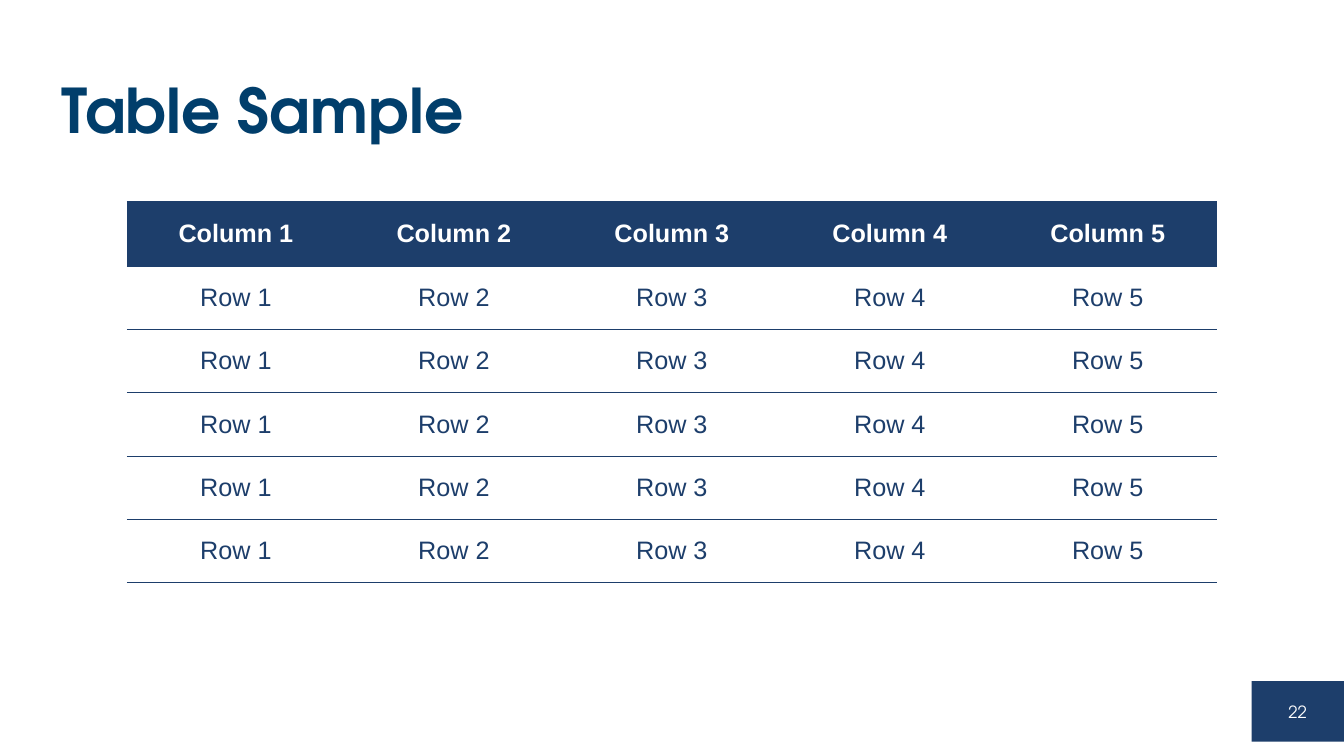
from lxml import etree
from pptx import Presentation
from pptx.dml.color import RGBColor
from pptx.enum.shapes import MSO_SHAPE
from pptx.enum.text import MSO_ANCHOR, PP_ALIGN
from pptx.oxml.ns import qn
from pptx.util import Pt

RECTANGLE = MSO_SHAPE.RECTANGLE
MIDDLE = MSO_ANCHOR.MIDDLE
LEFT, CENTER = PP_ALIGN.LEFT, PP_ALIGN.CENTER

NAVY = RGBColor(0x1D, 0x3E, 0x6B)
TITLE_BLUE = RGBColor(0x01, 0x3E, 0x6B)
WHITE = RGBColor(0xFF, 0xFF, 0xFF)

TITLE_FORMAT = {"name": "TeX Gyre Adventor", "size": Pt(44), "bold": True}
NUMBER_FORMAT = {"name": "TeX Gyre Adventor", "size": Pt(12), "bold": False}
HEADER_FORMAT = {"name": "Arial", "size": Pt(18), "bold": True}
BODY_FORMAT = {**HEADER_FORMAT, "bold": False}
CELL_FORMAT = {
    "vertical_anchor": MIDDLE,
    "margin_left": Pt(5.04),
    "margin_right": Pt(5.04),
    "margin_top": Pt(2.88),
    "margin_bottom": Pt(2.88),
}

COLUMN_COUNT = 5
BODY_ROW_COUNT = 5
COLUMN_WIDTH = 155.7
HEADER_HEIGHT = 46.2
ROW_HEIGHT = 45.2


def apply_format(target, values):
    """Set each attribute of the target from a dict of values."""
    for name, value in values.items():
        setattr(target, name, value)


def write_text(text_frame, text, font_format, color, alignment):
    """Write one formatted paragraph and return it."""
    paragraph = text_frame.paragraphs[0]
    paragraph.alignment = alignment
    run = paragraph.add_run()
    run.text = text
    apply_format(run.font, font_format)
    run.font.color.rgb = color
    return paragraph


def add_title(slide, text):
    """Add the slide title."""
    shape = slide.shapes.add_textbox(Pt(36.72), Pt(28.8), Pt(887.04), Pt(104.4))
    apply_format(shape.text_frame, {"word_wrap": True, "vertical_anchor": MIDDLE})
    paragraph = write_text(shape.text_frame, text, TITLE_FORMAT, TITLE_BLUE, LEFT)
    paragraph.line_spacing = 0.9


def add_page_number(slide, text):
    """Add the filled page number box at the right edge."""
    shape = slide.shapes.add_shape(RECTANGLE, Pt(894), Pt(486.5), Pt(66), Pt(43.2))
    shape.shadow.inherit = False
    shape.fill.solid()
    shape.fill.fore_color.rgb = NAVY
    shape.line.fill.background()
    shape.text_frame.vertical_anchor = MIDDLE
    write_text(shape.text_frame, text, NUMBER_FORMAT, WHITE, CENTER)


def set_borders(cell):
    """Draw thin lines above and below a cell and none at its sides."""
    properties = cell._tc.get_or_add_tcPr()
    for position, side in enumerate(("lnL", "lnR", "lnT", "lnB")):
        line = etree.Element(qn(f"a:{side}"), w=str(Pt(0.5)))
        if side in ("lnT", "lnB"):
            fill = etree.SubElement(line, qn("a:solidFill"))
            etree.SubElement(fill, qn("a:srgbClr"), val=str(NAVY))
        else:
            etree.SubElement(line, qn("a:noFill"))
        properties.insert(position, line)


def fill_cell(cell, text, is_header):
    """Style one table cell and write its text."""
    apply_format(cell, CELL_FORMAT)
    if is_header:
        cell.fill.solid()
        cell.fill.fore_color.rgb = NAVY
        write_text(cell.text_frame, text, HEADER_FORMAT, WHITE, CENTER)
    else:
        cell.fill.background()
        write_text(cell.text_frame, text, BODY_FORMAT, NAVY, CENTER)
    set_borders(cell)


def add_sample_table(slide):
    """Add the table with one header row and equal body rows."""
    heights = [HEADER_HEIGHT] + [ROW_HEIGHT] * BODY_ROW_COUNT
    table = slide.shapes.add_table(
        len(heights), COLUMN_COUNT, Pt(90.72), Pt(144),
        Pt(COLUMN_WIDTH * COLUMN_COUNT), Pt(sum(heights)),
    ).table
    apply_format(table, {"first_row": True, "horz_banding": False})
    for column in table.columns:
        column.width = Pt(COLUMN_WIDTH)
    for row_index, (row, height) in enumerate(zip(table.rows, heights)):
        row.height = Pt(height)
        is_header = row_index == 0
        label = "Column" if is_header else "Row"
        for number, cell in enumerate(row.cells, start=1):
            fill_cell(cell, f"{label} {number}", is_header)


def main():
    """Build and save the slide."""
    presentation = Presentation()
    presentation.slide_width = Pt(960)
    presentation.slide_height = Pt(540)
    slide = presentation.slides.add_slide(presentation.slide_layouts[6])
    add_title(slide, "Table Sample")
    add_page_number(slide, "22")
    add_sample_table(slide)
    presentation.save("out.pptx")


if __name__ == "__main__":
    main()
